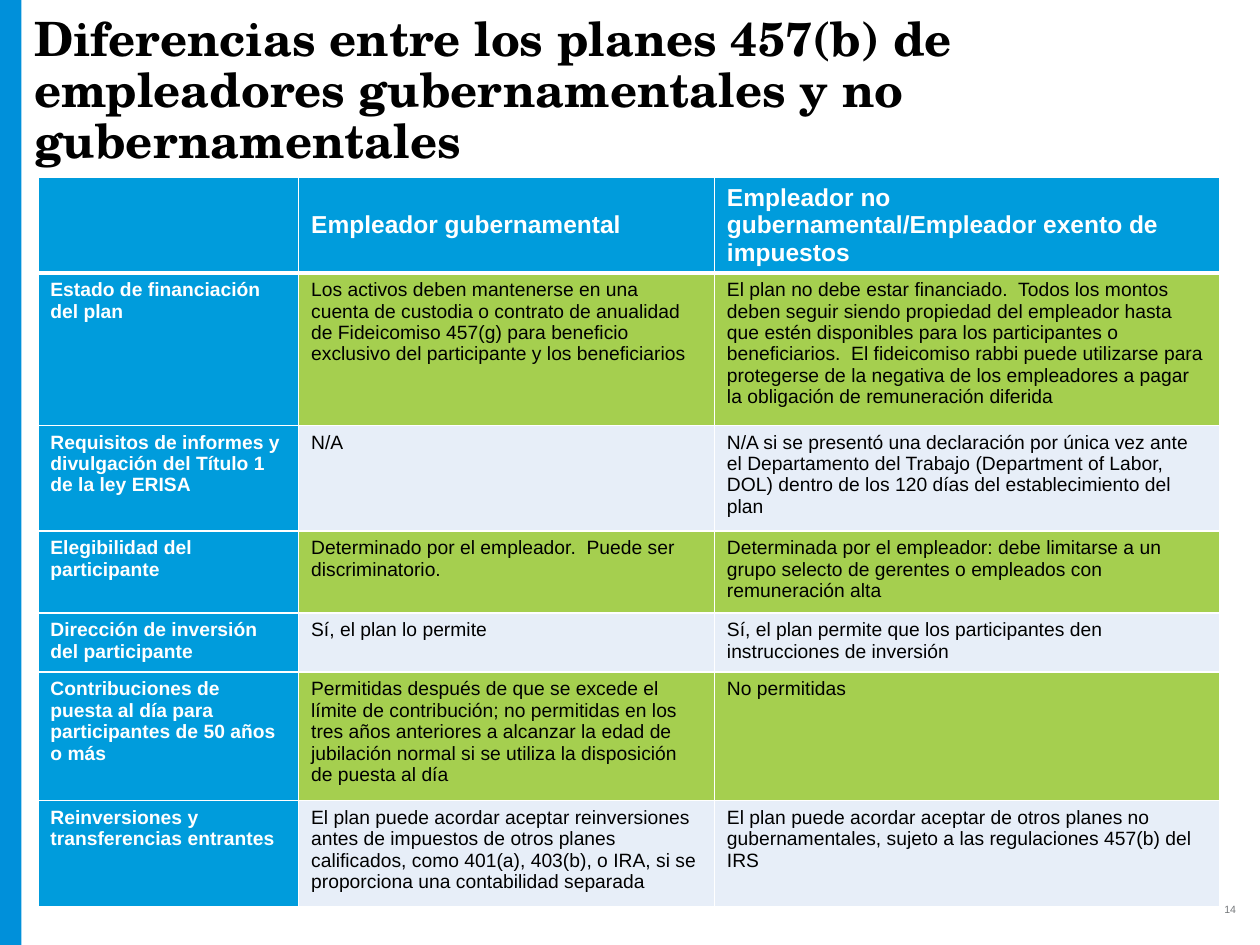
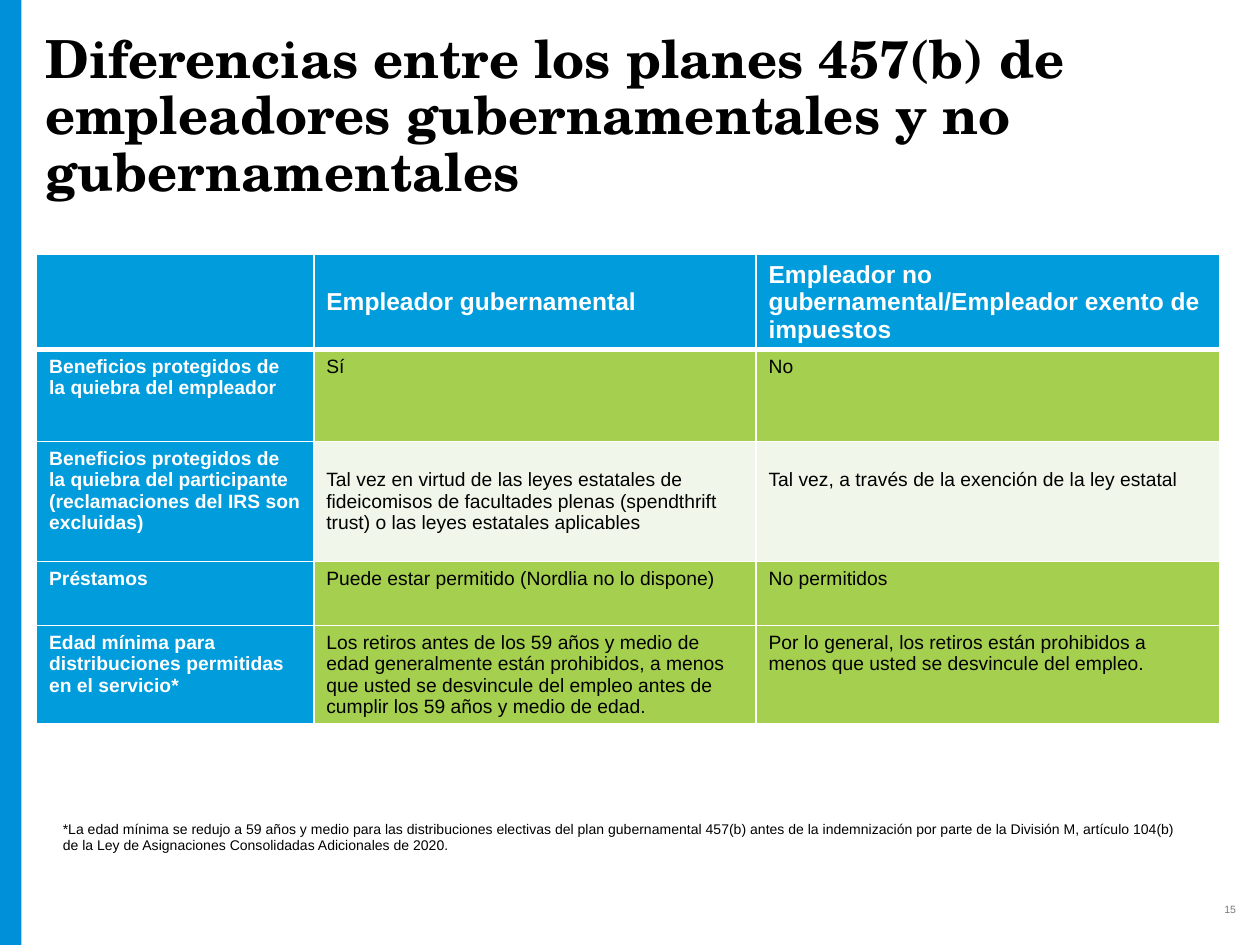
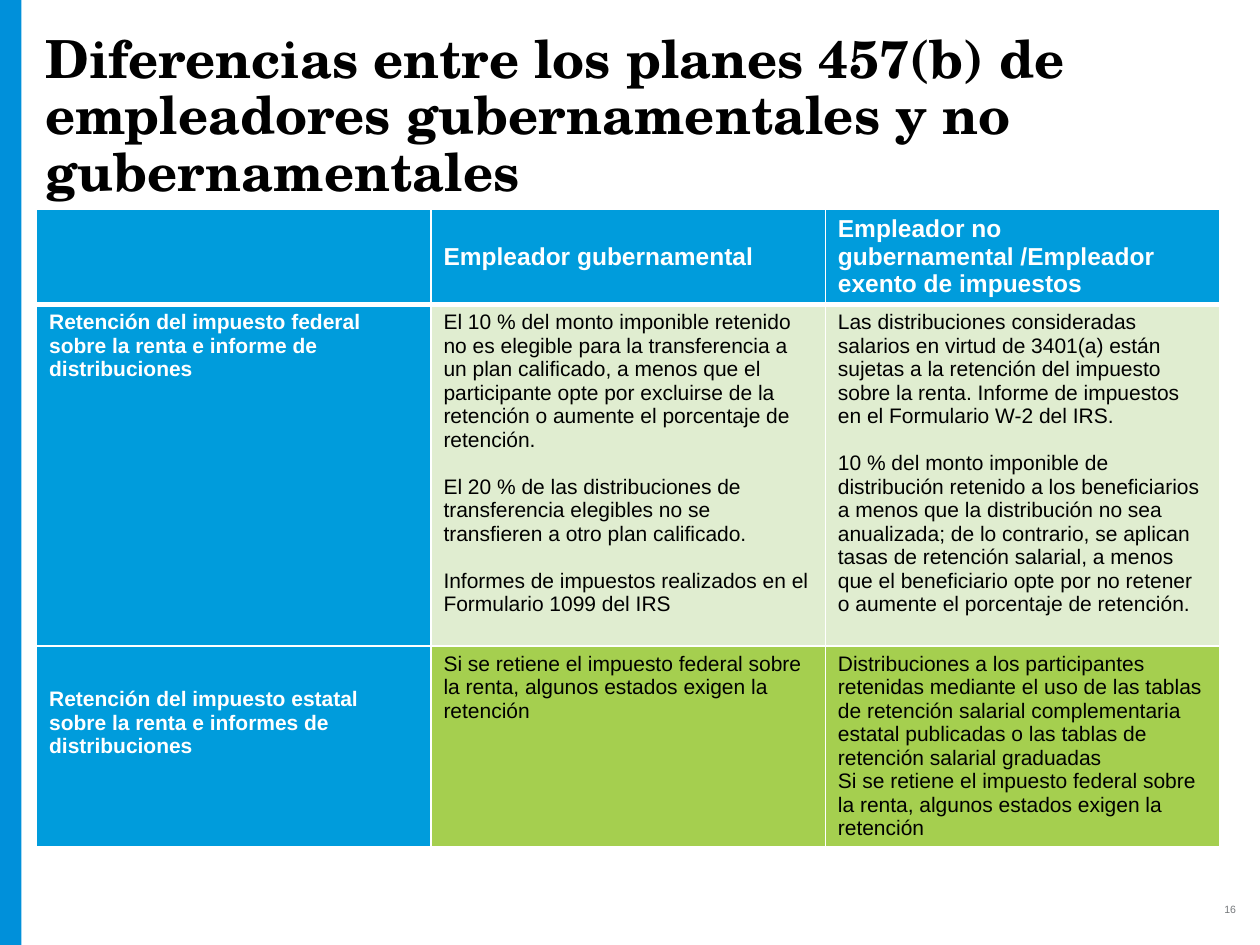
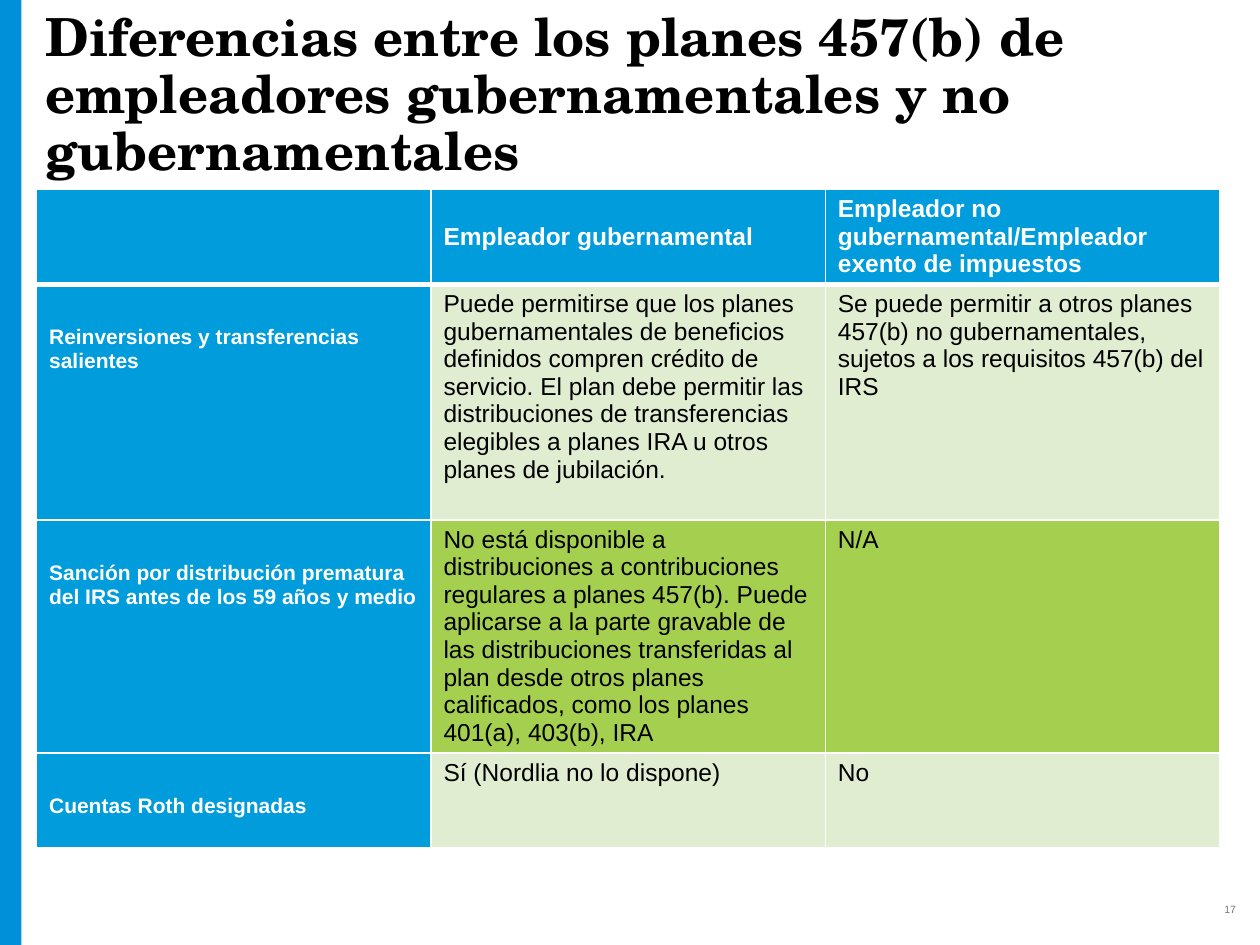
from dataclasses import dataclass

import pptx
import pptx.dml.color
import pptx.enum.shapes
import pptx.enum.text
import pptx.oxml
import pptx.oxml.ns
import pptx.util
from lxml import etree

Inches = pptx.util.Inches
Pt = pptx.util.Pt
Anchor = pptx.enum.text.MSO_ANCHOR
Align = pptx.enum.text.PP_ALIGN
qn = pptx.oxml.ns.qn


@dataclass(frozen=True)
class Theme:
    title_font: str = "TeX Gyre Schola"
    body_font: str = "Arial"
    band: str = "0090DA"
    heading: str = "009CDC"
    green: str = "A5CF4F"
    mist: str = "E7EEF8"
    pale: str = "F0F6E9"
    sage: str = "E0EDD0"
    white: str = "FFFFFF"
    black: str = "000000"
    gray: str = "75787B"
    header_size: int = 14
    note_size: int = 8
    number_size: int = 6
    rule: int = 1
    header_rule: int = 3


THEME = Theme()
TITLE = "Diferencias entre los planes 457(b) de empleadores gubernamentales y no gubernamentales"
HEADERS = ("", "Empleador gubernamental", "Empleador no gubernamental/Empleador exento de impuestos")
HEADER_HEIGHT = 0.75
CELL_TOP = 0.05
FIRST_NUMBER = 14
PADDING = (0.07, 0.04, 0.07, 0.04)


@dataclass(frozen=True)
class Row:
    height: float
    fill: str
    texts: tuple
    label_drop: float = 0
    body_drop: float = 0
    gap: float = 0


@dataclass(frozen=True)
class Comparison:
    title_box: tuple
    title_size: int
    corner: tuple
    columns: tuple
    label_size: int
    body_size: int
    rows: tuple
    headers: tuple = HEADERS
    footnote: str = ""


COMPARISONS = (
    Comparison(
        title_box=(0.2, 0.08, 9.86, 1.3), title_size=27,
        corner=(0.3, 1.41), columns=(2.07, 3.3, 4.01), label_size=11, body_size=11,
        rows=(
            Row(1.21, THEME.green, (
                "Estado de financiación del plan",
                "Los activos deben mantenerse en una cuenta de custodia o contrato de anualidad de Fideicomiso 457(g) para beneficio exclusivo del participante y los beneficiarios",
                "El plan no debe estar financiado.  Todos los montos deben seguir siendo propiedad del empleador hasta que estén disponibles para los participantes o beneficiarios.  El fideicomiso rabbi puede utilizarse para protegerse de la negativa de los empleadores a pagar la obligación de remuneración diferida")),
            Row(0.84, THEME.mist, (
                "Requisitos de informes y divulgación del Título 1 de la ley ERISA",
                "N/A",
                "N/A si se presentó una declaración por única vez ante el Departamento del Trabajo (Department of Labor, DOL) dentro de los 120 días del establecimiento del plan")),
            Row(0.65, THEME.green, (
                "Elegibilidad del participante",
                "Determinado por el empleador.  Puede ser discriminatorio.",
                "Determinada por el empleador: debe limitarse a un grupo selecto de gerentes o empleados con remuneración alta")),
            Row(0.47, THEME.mist, (
                "Dirección de inversión del participante",
                "Sí, el plan lo permite",
                "Sí, el plan permite que los participantes den instrucciones de inversión")),
            Row(1.02, THEME.green, (
                "Contribuciones de puesta al día para participantes de 50 años o más",
                "Permitidas después de que se excede el límite de contribución; no permitidas en los tres años anteriores a alcanzar la edad de jubilación normal si se utiliza la disposición de puesta al día",
                "No permitidas")),
            Row(0.84, THEME.mist, (
                "Reinversiones y transferencias entrantes",
                "El plan puede acordar aceptar reinversiones antes de impuestos de otros planes calificados, como 401(a), 403(b), o IRA, si se proporciona una contabilidad separada",
                "El plan puede acordar aceptar de otros planes no gubernamentales, sujeto a las regulaciones 457(b) del IRS")),
        )),
    Comparison(
        title_box=(0.29, 0.22, 9.38, 1.43), title_size=30,
        corner=(0.29, 2.02), columns=(2.2, 3.51, 3.68), label_size=11, body_size=11,
        rows=(
            Row(0.73, THEME.green, (
                "Beneficios protegidos de la quiebra del empleador", "Sí", "No")),
            Row(0.95, THEME.pale, (
                "Beneficios protegidos de la quiebra del participante (reclamaciones del IRS son excluidas)",
                "Tal vez en virtud de las leyes estatales de fideicomisos de facultades plenas (spendthrift trust) o las leyes estatales aplicables",
                "Tal vez, a través de la exención de la ley estatal"), body_drop=0.17),
            Row(0.51, THEME.green, (
                "Préstamos", "Puede estar permitido (Nordlia no lo dispone)", "No permitidos")),
            Row(0.78, THEME.green, (
                "Edad mínima para distribuciones permitidas en el servicio*",
                "Los retiros antes de los 59 años y medio de edad generalmente están prohibidos, a menos que usted se desvincule del empleo antes de cumplir los 59 años y medio de edad.",
                "Por lo general, los retiros están prohibidos a menos que usted se desvincule del empleo.")),
        ),
        footnote="*La edad mínima se redujo a 59 años y medio para las distribuciones electivas del plan gubernamental 457(b) antes de la indemnización por parte de la División M, artículo 104(b) de la Ley de Asignaciones Consolidadas Adicionales de 2020."),
    Comparison(
        title_box=(0.29, 0.22, 9.59, 1.32), title_size=30,
        corner=(0.29, 1.66), columns=(3.13,) * 3, label_size=12, body_size=12,
        headers=HEADERS[:2] + ("Empleador no gubernamental /Empleador exento de impuestos",),
        rows=(
            Row(2.71, THEME.sage, (
                "Retención del impuesto federal sobre la renta e informe de distribuciones",
                "El 10 % del monto imponible retenido no es elegible para la transferencia a un plan calificado, a menos que el participante opte por excluirse de la retención o aumente el porcentaje de retención.\n"
                "El 20 % de las distribuciones de transferencia elegibles no se transfieren a otro plan calificado.\n"
                "Informes de impuestos realizados en el Formulario 1099 del IRS",
                "Las distribuciones consideradas salarios en virtud de 3401(a) están sujetas a la retención del impuesto sobre la renta. Informe de impuestos en el Formulario W-2 del IRS.\n"
                "10 % del monto imponible de distribución retenido a los beneficiarios a menos que la distribución no sea anualizada; de lo contrario, se aplican tasas de retención salarial, a menos que el beneficiario opte por no retener o aumente el porcentaje de retención."),
                gap=13.4),
            Row(1.59, THEME.green, (
                "Retención del impuesto estatal sobre la renta e informes de distribuciones",
                "Si se retiene el impuesto federal sobre la renta, algunos estados exigen la retención",
                "Distribuciones a los participantes retenidas mediante el uso de las tablas de retención salarial complementaria estatal publicadas o las tablas de retención salarial graduadas\n"
                "Si se retiene el impuesto federal sobre la renta, algunos estados exigen la retención"),
                label_drop=0.28),
        )),
    Comparison(
        title_box=(0.29, 0.05, 9.28, 0.63), title_size=30,
        corner=(0.29, 1.5), columns=(3.13,) * 3, label_size=12, body_size=14,
        rows=(
            Row(1.87, THEME.sage, (
                "Reinversiones y transferencias salientes",
                "Puede permitirse que los planes gubernamentales de beneficios definidos compren crédito de servicio. El plan debe permitir las distribuciones de transferencias elegibles a planes IRA u otros planes de jubilación.",
                "Se puede permitir a otros planes 457(b) no gubernamentales, sujetos a los requisitos 457(b) del IRS"),
                label_drop=0.28),
            Row(1.85, THEME.green, (
                "Sanción por distribución prematura del IRS antes de los 59 años y medio",
                "No está disponible a distribuciones a contribuciones regulares a planes 457(b). Puede aplicarse a la parte gravable de las distribuciones transferidas al plan desde otros planes calificados, como los planes 401(a), 403(b), IRA",
                "N/A"), label_drop=0.28),
            Row(0.75, THEME.sage, (
                "Cuentas Roth designadas", "Sí (Nordlia no lo dispone)", "No"), label_drop=0.28),
        )),
)


def rgb(value):
    return pptx.dml.color.RGBColor.from_string(value)


def set_values(target, values):
    for key, value in values.items():
        setattr(target, key, value)


def set_font(font, size, color, bold=False, name=THEME.body_font):
    set_values(font, {"name": name, "size": Pt(size), "bold": bold})
    font.color.rgb = rgb(color)


def set_frame(frame, insets, anchor=Anchor.TOP):
    sides = ("margin_left", "margin_top", "margin_right", "margin_bottom")
    set_values(frame, dict(zip(sides, map(Inches, insets))))
    set_values(frame, {
        "word_wrap": True,
        "auto_size": pptx.enum.text.MSO_AUTO_SIZE.NONE,
        "vertical_anchor": anchor,
    })


def add_band(prs, slide):
    band = slide.shapes.add_shape(
        pptx.enum.shapes.MSO_SHAPE.RECTANGLE, 0, 0, Inches(0.17), prs.slide_height)
    band.shadow.inherit = False
    band.fill.solid()
    band.fill.fore_color.rgb = rgb(THEME.band)
    band.line.fill.background()
    prs.slide_master.shapes.element.insert(2, band.element)


def add_title(slide, box, size):
    title = slide.shapes.title
    set_values(title, dict(zip(("left", "top", "width", "height"), map(Inches, box))))
    set_frame(title.text_frame, PADDING)
    title.text_frame.text = TITLE
    heading = title.text_frame.paragraphs[0]
    set_values(heading, {"alignment": Align.LEFT, "line_spacing": 0.9})
    set_font(heading.font, size, THEME.black, True, THEME.title_font)


def add_slide_number(slide, number):
    box = slide.shapes.add_textbox(*map(Inches, (9.14, 7.02, 0.74, 0.4)))
    set_frame(box.text_frame, PADDING, Anchor.MIDDLE)
    paragraph = box.text_frame.paragraphs[0]
    paragraph.alignment = Align.RIGHT
    run = paragraph.add_run()
    run.text = str(number)
    set_font(run.font, THEME.number_size, THEME.gray)
    field = etree.SubElement(paragraph._p, qn("a:fld"), {
        "id": "{B6F15528-21DE-4FAA-801E-634DDDAF4B2B}", "type": "slidenum"})
    for part in list(run._r):
        field.append(part)
    paragraph._p.remove(run._r)


def add_footnote(slide, text):
    note = slide.shapes.add_textbox(*map(Inches, (0.4, 6.51, 9.19, 0.4)))
    set_frame(note.text_frame, (0.1, 0, 0.1, 0))
    note.text_frame.text = text
    set_font(note.text_frame.paragraphs[0].font, THEME.note_size, THEME.black)


def set_borders(cell, top, bottom):
    properties = cell._tc.get_or_add_tcPr()
    widths = {"lnL": THEME.rule, "lnR": THEME.rule, "lnT": top, "lnB": bottom}
    for position, (side, width) in enumerate(widths.items()):
        line = etree.Element(qn(f"a:{side}"), w=str(Pt(width)))
        fill = etree.SubElement(line, qn("a:solidFill"))
        etree.SubElement(fill, qn("a:srgbClr"), val=THEME.white)
        properties.insert(position, line)


def fill_cell(cell, text, fill, size, color, bold, drop=0, gap=0, anchor=Anchor.TOP):
    cell.text = text
    set_values(cell, {"vertical_anchor": anchor, "margin_top": Inches(CELL_TOP + drop)})
    cell.fill.solid()
    cell.fill.fore_color.rgb = rgb(fill)
    for index, paragraph in enumerate(cell.text_frame.paragraphs):
        if index and gap:
            paragraph.space_before = Pt(gap)
        set_font(paragraph.font, size, color, bold)


def add_comparison_table(slide, comparison):
    heights = (HEADER_HEIGHT, *(row.height for row in comparison.rows))
    frame = slide.shapes.add_table(
        len(heights), len(comparison.columns), *map(Inches, comparison.corner),
        Inches(sum(comparison.columns)), Inches(sum(heights)))
    table = frame.table
    set_values(table, {"first_row": False, "horz_banding": False})
    for column, width in zip(table.columns, comparison.columns):
        column.width = Inches(width)
    for table_row, height in zip(table.rows, heights):
        table_row.height = Inches(height)

    for column, text in enumerate(comparison.headers):
        cell = table.cell(0, column)
        fill_cell(cell, text, THEME.heading, THEME.header_size, THEME.white, True,
                  anchor=Anchor.MIDDLE)
        set_borders(cell, THEME.rule, THEME.header_rule)

    for index, row in enumerate(comparison.rows, 1):
        top = THEME.header_rule if index == 1 else THEME.rule
        for column, text in enumerate(row.texts):
            cell = table.cell(index, column)
            if column == 0:
                fill_cell(cell, text, THEME.heading, comparison.label_size,
                          THEME.white, True, row.label_drop)
            else:
                fill_cell(cell, text, row.fill, comparison.body_size,
                          THEME.black, False, row.body_drop, row.gap)
            set_borders(cell, top, THEME.rule)


def main():
    prs = pptx.Presentation()
    set_values(prs, {"slide_width": Inches(10), "slide_height": Inches(7.5)})
    prs.element.set("firstSlideNum", str(FIRST_NUMBER))
    title_only = prs.slide_layouts[5]
    for number, comparison in enumerate(COMPARISONS, FIRST_NUMBER):
        slide = prs.slides.add_slide(title_only)
        if number == FIRST_NUMBER:
            add_band(prs, slide)
        add_title(slide, comparison.title_box, comparison.title_size)
        add_comparison_table(slide, comparison)
        if comparison.footnote:
            add_footnote(slide, comparison.footnote)
        add_slide_number(slide, number)
    prs.save("out.pptx")


if __name__ == "__main__":
    main()
